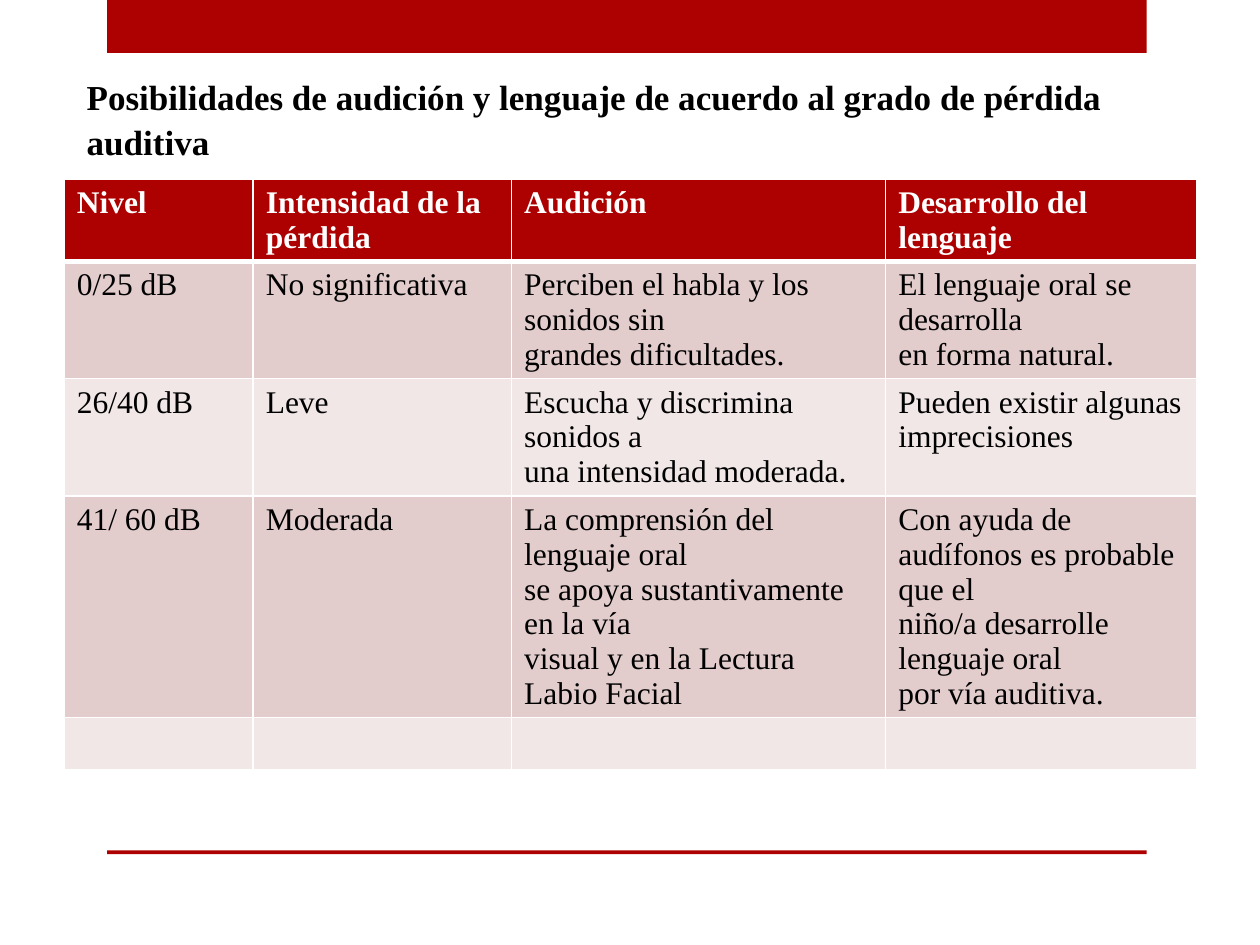
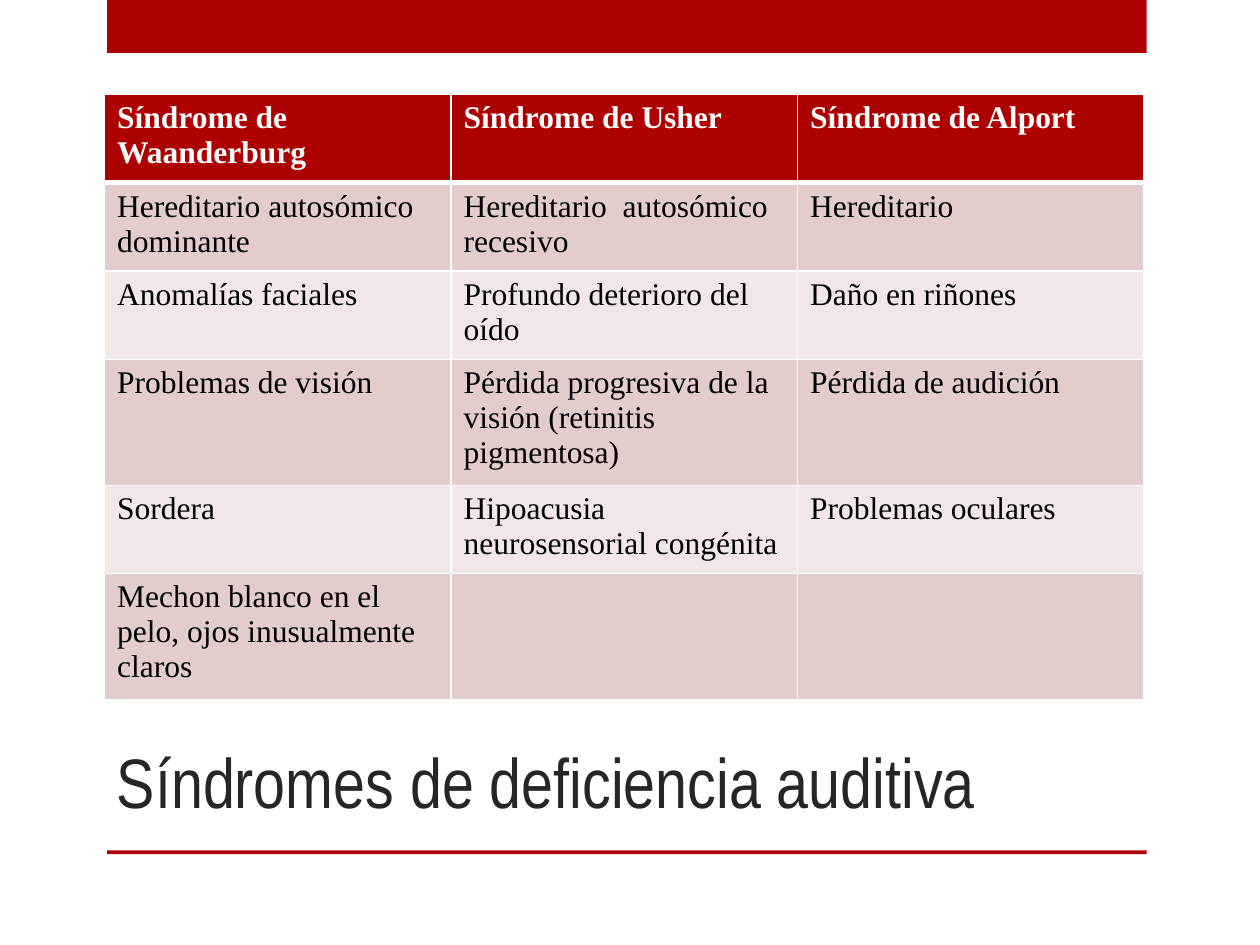
from typing import NamedTuple

from lxml.etree import SubElement
from pptx import Presentation
from pptx.dml.color import RGBColor
from pptx.enum.shapes import MSO_SHAPE
from pptx.enum.text import MSO_ANCHOR
from pptx.oxml.ns import qn
from pptx.util import Inches, Pt

# The slide is a grid of 100 columns by 75 rows
WIDE, HIGH = Inches(10), Inches(7.5)
COL, ROW = WIDE / 100, HIGH / 75

HUES = {
    "red": "AD0101", "rose": "E3CCCC", "pale": "F1E7E7",
    "white": "FFFFFF", "black": "000000", "grey": "262626",
}
SERIF = "Times New Roman"
LINE = 4.1  # least height of a table line, in rows


class Box(NamedTuple):
    left: float
    top: float
    width: float
    height: float

    def place(self) -> list[int]:
        return [round(self.left * COL), round(self.top * ROW),
                round(self.width * COL), round(self.height * ROW)]


class Style(NamedTuple):
    face: str
    size: int
    hue: str
    bold: bool = False


class Title(NamedTuple):
    box: Box
    text: str
    style: Style
    frame: dict
    pitch: float = 1.0


class Grid(NamedTuple):
    box: Box
    cols: list[float]
    rows: list[list[str]]


class Page(NamedTuple):
    title: Title
    grid: Grid


HEAD = Style(SERIF, 18, "white", True)
BODY = Style(SERIF, 18, "black")
BANDS = [Box(8.5, 0, 82.5, 4.2), Box(8.5, 67.5, 82.5, 0.3)]

PAGES = [
    Page(
        Title(Box(5.9, 5.2, 89, 7.7),
              "Posibilidades de audición y lenguaje de acuerdo al grado de pérdida auditiva",
              Style(SERIF, 20, "black", True),
              {"word_wrap": True, "vertical_anchor": MSO_ANCHOR.TOP}, 1.08),
        Grid(Box(5.1, 14.2, 89.8, 50.1), [15, 20.5, 29.7, 24.7], [
            ["Nivel", "Intensidad de la pérdida", "Audición", "Desarrollo del lenguaje"],
            ["0/25 dB", "No significativa",
             "Perciben el habla y los sonidos sin\ngrandes dificultades.",
             "El lenguaje oral se desarrolla\nen forma natural."],
            ["26/40 dB", "Leve",
             "Escucha y discrimina sonidos a\nuna intensidad moderada.",
             "Pueden existir algunas\nimprecisiones"],
            ["41/ 60 dB", "Moderada",
             "La comprensión del lenguaje oral\nse apoya sustantivamente en la vía\n"
             "visual y en la Lectura Labio Facial",
             "Con ayuda de\naudífonos es probable que el\n"
             "niño/a desarrolle lenguaje oral\npor vía auditiva."],
            ["", "", "", ""],
        ]),
    ),
    Page(
        Title(Box(8.3, 56.4, 83.4, 9.4), "Síndromes de deficiencia auditiva",
              Style("Arial Narrow", 40, "grey"),
              {"word_wrap": True, "vertical_anchor": MSO_ANCHOR.BOTTOM}),
        Grid(Box(8.3, 7.5, 82.5, 48), [27.5] * 3, [
            ["Síndrome de Waanderburg", "Síndrome de Usher", "Síndrome de Alport"],
            ["Hereditario autosómico dominante", "Hereditario  autosómico recesivo",
             "Hereditario"],
            ["Anomalías faciales", "Profundo deterioro del oído", "Daño en riñones"],
            ["Problemas de visión",
             "Pérdida progresiva de la visión (retinitis pigmentosa)",
             "Pérdida de audición"],
            ["Sordera", "Hipoacusia neurosensorial congénita", "Problemas oculares"],
            ["Mechon blanco en el pelo, ojos inusualmente claros", "", ""],
        ]),
    ),
]


def tint(name: str) -> RGBColor:
    return RGBColor.from_string(HUES[name])


def apply(item, values: dict) -> None:
    for name, value in values.items():
        setattr(item, name, value)


def write(frame, text: str, style: Style, pitch: float = 1.0) -> None:
    frame.text = text
    for para in frame.paragraphs:
        para.line_spacing = pitch
        apply(para.font, {"name": style.face, "size": Pt(style.size), "bold": style.bold})
        para.font.color.rgb = tint(style.hue)


def edge(cell, side: str, width: float) -> None:
    line = SubElement(cell._tc.get_or_add_tcPr(), qn(f"a:{side}"), w=str(Pt(width)))
    fill = SubElement(line, qn("a:solidFill"))
    SubElement(fill, qn("a:srgbClr"), val=HUES["white"])


def draw_band(slide, box: Box) -> None:
    band = slide.shapes.add_shape(MSO_SHAPE.RECTANGLE, *box.place())
    band.shadow.inherit = False
    band.fill.solid()
    band.fill.fore_color.rgb = tint("red")
    band.line.fill.background()


def draw_title(slide, title: Title) -> None:
    frame = slide.shapes.add_textbox(*title.box.place()).text_frame
    apply(frame, title.frame)
    write(frame, title.text, title.style, title.pitch)


def draw_cell(cell, text: str, row: int) -> None:
    write(cell.text_frame, text, BODY if row else HEAD)
    # Borders come before the fill in the cell's properties
    for side in ("lnL", "lnR", "lnT", "lnB"):
        thick = (row, side) in {(0, "lnB"), (1, "lnT")}
        edge(cell, side, 3 if thick else 1)
    cell.fill.solid()
    shade = ("pale", "rose")[row % 2] if row else "red"
    cell.fill.fore_color.rgb = tint(shade)


def draw_grid(slide, grid: Grid) -> None:
    size = len(grid.rows), len(grid.cols)
    holder = slide.shapes.add_table(*size, *grid.box.place())
    table = holder.table
    for col, width in zip(table.columns, grid.cols):
        col.width = round(width * COL)
    for row, texts in enumerate(grid.rows):
        table.rows[row].height = round(LINE * ROW)
        for col, text in enumerate(texts):
            draw_cell(table.cell(row, col), text, row)
    holder.height = round(grid.box.height * ROW)


def main() -> None:
    deck = Presentation()
    apply(deck, {"slide_width": WIDE, "slide_height": HIGH})
    for page in PAGES:
        slide = deck.slides.add_slide(deck.slide_layouts[6])
        for band in BANDS:
            draw_band(slide, band)
        draw_grid(slide, page.grid)
        draw_title(slide, page.title)
    deck.save("out.pptx")


if __name__ == "__main__":
    main()
